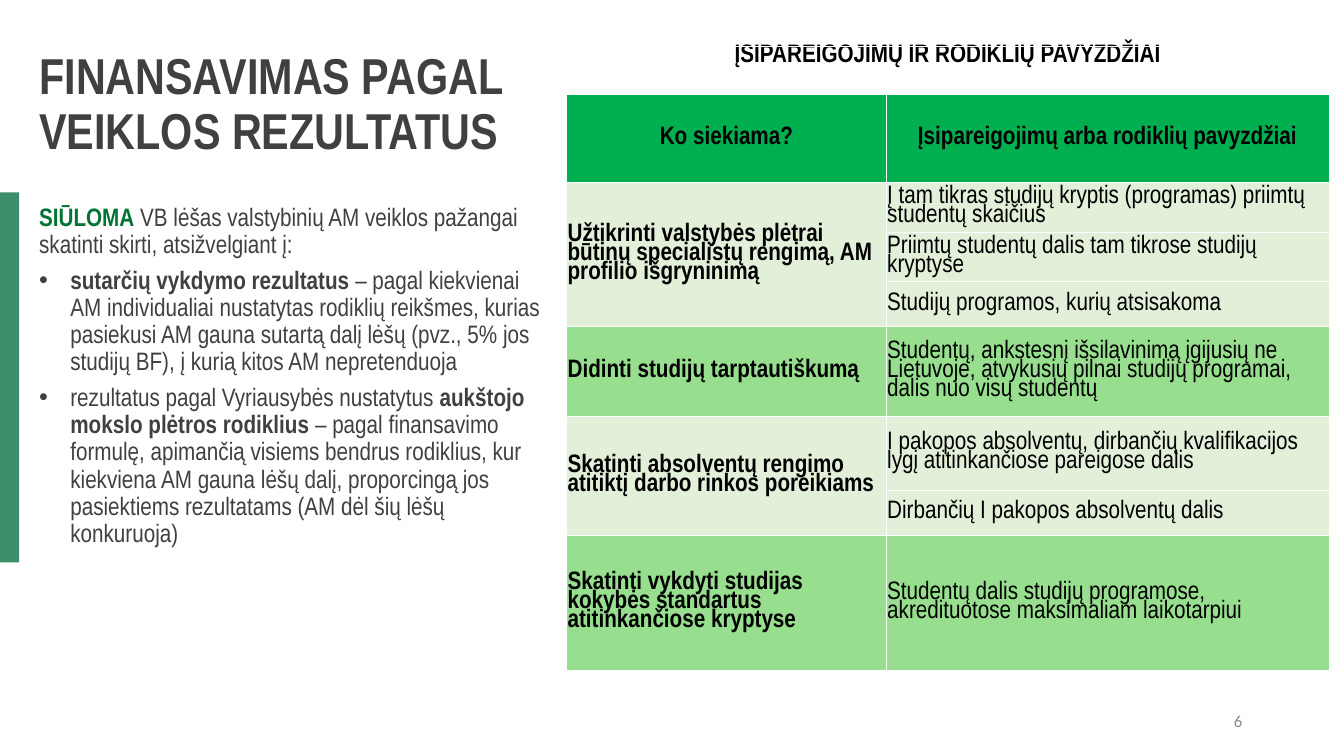
from lxml.etree import SubElement
from pptx import Presentation
from pptx.dml.color import RGBColor
from pptx.enum.shapes import MSO_SHAPE
from pptx.enum.text import MSO_ANCHOR, MSO_AUTO_SIZE, PP_ALIGN
from pptx.oxml.ns import qn
from pptx.util import Inches, Pt

SIZE = (13.33, 7.5)
NARROW = "Arial Narrow"
GREY, BLACK, WHITE = "404040", "000000", "FFFFFF"
HEADER_GREEN, PALE, LIGHT_GREEN = "00B050", "E2F0D9", "97DF8E"

TITLE = "FINANSAVIMAS PAGAL VEIKLOS REZULTATUS"
PAGE_NUMBER = "6"

# Each paragraph: bulleted or not, then (text, bold, colour) spans
BODY = [
    (False, [("SIŪLOMA", True, "007434"),
             (" VB lėšas valstybinių AM veiklos pažangai skatinti skirti, "
              "atsižvelgiant į:", False, GREY)]),
    (True, [("sutarčių vykdymo rezultatus ", True, GREY),
            ("– pagal kiekvienai AM individualiai nustatytas rodiklių reikšmes, "
             "kurias pasiekusi AM gauna sutartą dalį lėšų (pvz., 5% jos studijų BF), "
             "į kurią kitos AM nepretenduoja", False, GREY)]),
    (True, [("rezultatus pagal Vyriausybės nustatytus ", False, GREY),
            ("aukštojo mokslo plėtros rodiklius ", True, GREY),
            ("– pagal finansavimo formulę, apimančią visiems bendrus rodiklius, "
             "kur kiekviena AM gauna lėšų dalį, proporcingą jos pasiektiems "
             "rezultatams (AM dėl šių lėšų konkuruoja)", False, GREY)]),
]

TABLE_TITLE = "ĮSIPAREIGOJIMŲ IR RODIKLIŲ PAVYZDŽIAI"
HEADINGS = ["Ko siekiama?", "Įsipareigojimų arba rodiklių pavyzdžiai"]
GOALS = [
    ("Užtikrinti valstybės plėtrai būtinų specialistų rengimą, AM profilio išgryninimą",
     ["Į tam tikras studijų kryptis (programas) priimtų studentų skaičius",
      "Priimtų studentų dalis tam tikrose studijų kryptyse",
      "Studijų programos, kurių atsisakoma"]),
    ("Didinti studijų tarptautiškumą",
     ["Studentų, ankstesnį išsilavinimą įgijusių ne Lietuvoje, atvykusių pilnai "
      "studijų programai, dalis nuo visų studentų"]),
    ("Skatinti absolventų rengimo atitiktį darbo rinkos poreikiams",
     ["I pakopos absolventų, dirbančių kvalifikacijos lygį atitinkančiose "
      "pareigose dalis",
      "Dirbančių I pakopos absolventų dalis"]),
    ("Skatinti vykdyti studijas kokybės standartus atitinkančiose kryptyse",
     ["Studentų dalis studijų programose, akredituotose maksimaliam laikotarpiui"]),
]
COLUMNS = [3.17, 4.39]
ROWS = [0.48, 0.87, 0.48, 0.48, 0.45, 0.89, 0.73, 0.45, 1.34]


def rgb(value):
    return RGBColor.from_string(value)


def inches(*lengths):
    return [Inches(length) for length in lengths]


def set_all(target, values):
    for name, value in values.items():
        setattr(target, name, value)


def add_span(para, text, size=18, bold=False, color=BLACK, font=NARROW):
    span = para.add_run()
    span.text = text
    set_all(span.font, {"size": Pt(size), "bold": bold, "name": font})
    span.font.color.rgb = rgb(color)


def add_bullet(para):
    properties = para._p.get_or_add_pPr()
    properties.set("marL", str(Inches(0.31)))
    properties.set("indent", str(-Inches(0.31)))
    SubElement(properties, qn("a:buFont"), typeface="Arial")
    SubElement(properties, qn("a:buChar"), char="•")


def add_borders(cell):
    properties = cell._tc.get_or_add_tcPr()
    for index, side in enumerate(("lnL", "lnR", "lnT", "lnB")):
        line = SubElement(properties, qn(f"a:{side}"), w=str(Pt(0.5)))
        fill = SubElement(line, qn("a:solidFill"))
        SubElement(fill, qn("a:srgbClr"), val=WHITE)
        properties.remove(line)
        properties.insert(index, line)


def fill_cell(cell, text, color, bold=False, align=PP_ALIGN.LEFT,
              anchor=MSO_ANCHOR.MIDDLE):
    set_all(cell, {"margin_left": Inches(0.01), "margin_right": Inches(0.01),
                   "margin_top": Inches(0.01), "margin_bottom": 0,
                   "vertical_anchor": anchor})
    para = cell.text_frame.paragraphs[0]
    set_all(para, {"alignment": align, "line_spacing": 0.8})
    add_span(para, text, bold=bold)


def paint_cell(cell, color):
    cell.fill.solid()
    cell.fill.fore_color.rgb = rgb(color)
    add_borders(cell)


def add_goal_table(page):
    frame = page.shapes.add_table(len(ROWS), len(COLUMNS),
                                  *inches(5.62, 0.46, sum(COLUMNS), sum(ROWS)))
    table = frame.table
    for column, width in zip(table.columns, COLUMNS):
        column.width = Inches(width)
    for row, height in zip(table.rows, ROWS):
        row.height = Inches(height)

    center = PP_ALIGN.CENTER
    table.cell(0, 0).merge(table.cell(0, 1))
    fill_cell(table.cell(0, 0), TABLE_TITLE, WHITE, True, center, MSO_ANCHOR.TOP)
    for column, heading in enumerate(HEADINGS):
        fill_cell(table.cell(1, column), heading, HEADER_GREEN, True, center)

    colors = [WHITE, HEADER_GREEN]
    top = 2
    for index, (goal, examples) in enumerate(GOALS):
        color = (PALE, LIGHT_GREEN)[index % 2]
        if len(examples) > 1:
            table.cell(top, 0).merge(table.cell(top + len(examples) - 1, 0))
        fill_cell(table.cell(top, 0), goal, color, True)
        for row, example in enumerate(examples, top):
            fill_cell(table.cell(row, 1), example, color)
            colors.append(color)
        top += len(examples)
    for row, color in enumerate(colors):
        for column in range(len(COLUMNS)):
            paint_cell(table.cell(row, column), color)


def add_text_box(page, *place):
    box = page.shapes.add_textbox(*inches(*place))
    box.text_frame.word_wrap = True
    return box.text_frame


def main():
    deck = Presentation()
    deck.slide_width, deck.slide_height = inches(*SIZE)
    page = deck.slides.add_slide(deck.slide_layouts[5])

    bar = page.shapes.add_shape(MSO_SHAPE.RECTANGLE, *inches(0, 1.91, 0.19, 3.67))
    bar.shadow.inherit = False
    bar.fill.solid()
    bar.fill.fore_color.rgb = rgb("3D8F6C")
    bar.line.fill.background()

    title = page.shapes.title
    set_all(title, dict(zip(("left", "top", "width", "height"),
                            inches(0.29, 0.46, 5.23, 1.25))))
    set_all(title.text_frame, {"word_wrap": True, "auto_size": MSO_AUTO_SIZE.NONE,
                               "vertical_anchor": MSO_ANCHOR.TOP})
    heading = title.text_frame.paragraphs[0]
    set_all(heading, {"alignment": PP_ALIGN.LEFT, "line_spacing": 0.9})
    add_span(heading, TITLE, 36, True, GREY)

    body = add_text_box(page, 0.29, 1.98, 5.23, 4.37)
    for index, (bulleted, spans) in enumerate(BODY):
        para = body.add_paragraph() if index else body.paragraphs[0]
        set_all(para, {"line_spacing": 0.9, "space_after": Pt(6)})
        if bulleted:
            add_bullet(para)
        for text, bold, color in spans:
            add_span(para, text, bold=bold, color=color)

    add_goal_table(page)

    number = add_text_box(page, 9.42, 6.95, 3, 0.4)
    number.vertical_anchor = MSO_ANCHOR.MIDDLE
    number.paragraphs[0].alignment = PP_ALIGN.RIGHT
    add_span(number.paragraphs[0], PAGE_NUMBER, 12, False, "8C8C8C", "Calibri")

    deck.save("out.pptx")


if __name__ == "__main__":
    main()
